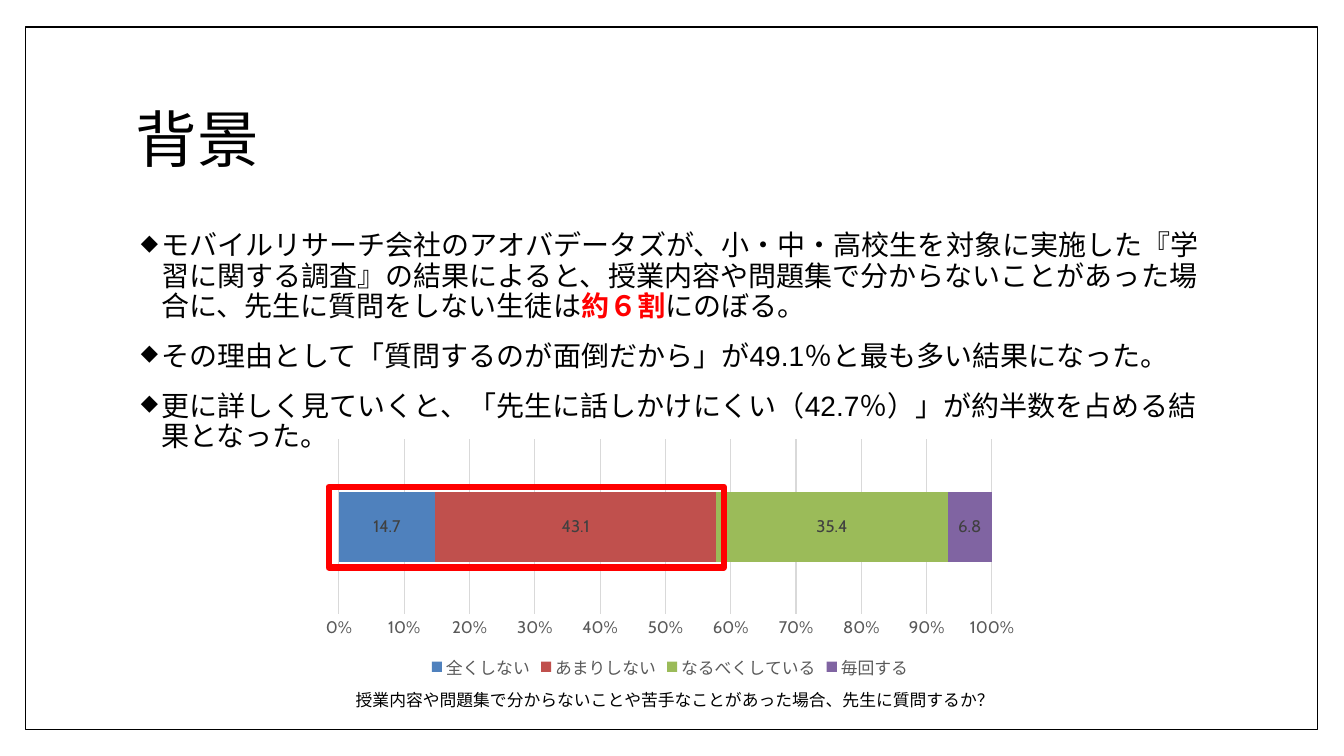
from dataclasses import dataclass
from typing import Optional

from lxml.etree import SubElement
from pptx import Presentation
from pptx.chart.data import CategoryChartData
from pptx.dml.color import RGBColor as RGB
from pptx.enum.chart import (
    XL_CHART_TYPE as ChartType,
    XL_LABEL_POSITION as LabelPos,
    XL_LEGEND_POSITION as LegendPos,
    XL_TICK_MARK as Tick,
)
from pptx.enum.shapes import MSO_SHAPE as Shape
from pptx.enum.text import MSO_ANCHOR as Anchor
from pptx.oxml.ns import qn
from pptx.util import Inches, Pt


@dataclass(frozen=True)
class Theme:
    font: str = "Cabin"
    number_font: str = "Arial"
    ink: RGB = RGB(0, 0, 0)
    paper: RGB = RGB(255, 255, 255)
    accent: RGB = RGB(255, 0, 0)
    axis: RGB = RGB(0x59, 0x59, 0x59)
    label: RGB = RGB(0x40, 0x40, 0x40)
    grid: RGB = RGB(0xD9, 0xD9, 0xD9)
    title_size: int = 44
    body_size: int = 20
    small_size: int = 12


THEME = Theme()


@dataclass(frozen=True)
class Box:
    left: float
    top: float
    width: float
    height: float

    def lengths(self) -> tuple:
        return tuple(map(Inches, (self.left, self.top, self.width, self.height)))


@dataclass(frozen=True)
class Run:
    text: str
    font: str = THEME.font
    color: RGB = THEME.ink
    bold: bool = False


@dataclass(frozen=True)
class Answer:
    name: str
    percent: float
    color: RGB


FINDINGS = [
    [
        Run("モバイルリサーチ会社のアオバデータズが、小・中・高校生を対象に実施した"
            "『学習に関する調査』の結果によると、授業内容や問題集で分からないことが"
            "あった場合に、先生に質問をしない生徒は"),
        Run("約６割", color=THEME.accent, bold=True),
        Run("にのぼる。"),
    ],
    [
        Run("その理由として「質問するのが面倒だから」が"),
        Run("49.1", font=THEME.number_font),
        Run("％と最も多い結果になった。"),
    ],
    [
        Run("更に詳しく見ていくと、「先生に話しかけにくい（"),
        Run("42.7", font=THEME.number_font),
        Run("％）」が約半数を占める結果となった。"),
    ],
]

ANSWERS = [
    Answer("全くしない", 14.7, RGB(0x4F, 0x81, 0xBD)),
    Answer("あまりしない", 43.1, RGB(0xC0, 0x50, 0x4D)),
    Answer("なるべくしている", 35.4, RGB(0x9B, 0xBB, 0x59)),
    Answer("毎回する", 6.8, RGB(0x80, 0x64, 0xA2)),
]


def style_font(font, size: float, color: RGB, name: str = THEME.font,
               bold: bool = False) -> None:
    font.name, font.size, font.bold = name, Pt(size), bold
    font.color.rgb = color


def add_bullet(paragraph) -> None:
    props = paragraph._p.get_or_add_pPr()
    props.set("marL", str(Inches(0.25)))
    props.set("indent", str(Inches(-0.2)))
    color = SubElement(props, qn("a:buClr"))
    SubElement(color, qn("a:srgbClr")).set("val", str(THEME.ink))
    SubElement(props, qn("a:buSzPct")).set("val", "80000")
    SubElement(props, qn("a:buChar")).set("char", "◆")


def add_text(slide, box: Box, paragraphs: list[list[Run]], *, size: float,
             anchor: Anchor = Anchor.TOP, wrap: bool = True, bullets: bool = False,
             line_spacing: Optional[float] = None, space_before: float = 0) -> None:
    frame = slide.shapes.add_textbox(*box.lengths()).text_frame
    frame.word_wrap = wrap
    frame.vertical_anchor = anchor
    for index, runs in enumerate(paragraphs):
        paragraph = frame.add_paragraph() if index else frame.paragraphs[0]
        paragraph.line_spacing = line_spacing
        paragraph.space_before = Pt(space_before)
        if bullets:
            add_bullet(paragraph)
        for run in runs:
            piece = paragraph.add_run()
            piece.text = run.text
            style_font(piece.font, size, run.color, run.font, run.bold)


def add_frame(slide, box: Box, color: RGB, weight: float,
              fill: Optional[RGB] = None) -> None:
    frame = slide.shapes.add_shape(Shape.RECTANGLE, *box.lengths())
    frame.shadow.inherit = False
    if fill is None:
        frame.fill.background()
    else:
        frame.fill.solid()
        frame.fill.fore_color.rgb = fill
    frame.line.color.rgb = color
    frame.line.width = Pt(weight)


def add_answer_chart(slide, box: Box, answers: list[Answer]) -> None:
    survey = CategoryChartData()
    survey.categories = ["1"]
    for answer in answers:
        survey.add_series(answer.name, [answer.percent])
    chart = slide.shapes.add_chart(
        ChartType.BAR_STACKED_100, *box.lengths(), survey).chart
    style_font(chart.font, 10, THEME.ink)
    chart.has_title = False

    # Legend and axes
    chart.has_legend = True
    chart.legend.position = LegendPos.BOTTOM
    chart.legend.include_in_layout = False
    style_font(chart.legend.font, THEME.small_size, THEME.axis)
    chart.category_axis.visible = False
    scale = chart.value_axis
    scale.major_tick_mark = scale.minor_tick_mark = Tick.NONE
    scale.format.line.fill.background()
    scale.major_gridlines.format.line.color.rgb = THEME.grid
    scale.major_gridlines.format.line.width = Pt(0.75)
    scale.tick_labels.number_format = "0%"
    scale.tick_labels.number_format_is_linked = False
    style_font(scale.tick_labels.font, THEME.small_size, THEME.axis)

    # Bar segments
    plot = chart.plots[0]
    plot.gap_width, plot.overlap = 150, 100
    plot.vary_by_categories = False
    for answer, series in zip(answers, plot.series):
        series.format.fill.solid()
        series.format.fill.fore_color.rgb = answer.color
        labels = series.data_labels
        labels.show_value = True
        labels.position = LabelPos.CENTER
        style_font(labels.font, THEME.small_size, THEME.label)


def main() -> None:
    deck = Presentation()
    deck.slide_width, deck.slide_height = Inches(13.33), Inches(7.5)
    slide = deck.slides.add_slide(deck.slide_layouts[6])

    # Page border
    add_frame(slide, Box(0.25, 0.27, 12.82, 6.97), THEME.ink, 1, THEME.paper)

    # Title, findings and the survey question
    add_text(slide, Box(1.25, 0.67, 10.8, 1.48), [[Run("背景")]],
             size=THEME.title_size, anchor=Anchor.MIDDLE, line_spacing=0.9)
    add_text(slide, Box(1.25, 2.25, 10.8, 4.42), FINDINGS, size=THEME.body_size,
             bullets=True, line_spacing=0.9, space_before=14)
    question = "授業内容や問題集で分からないことや苦手なことがあった場合、先生に質問するか？"
    add_text(slide, Box(3.43, 6.79, 6.6, 0.3), [[Run(question)]],
             size=THEME.small_size, wrap=False)

    # Chart with the two "does not ask" answers marked
    add_answer_chart(slide, Box(3.09, 4.31, 7.11, 2.47), ANSWERS)
    add_frame(slide, Box(3.26, 4.83, 3.92, 0.8), THEME.accent, 4.5)

    deck.save("out.pptx")


if __name__ == "__main__":
    main()
